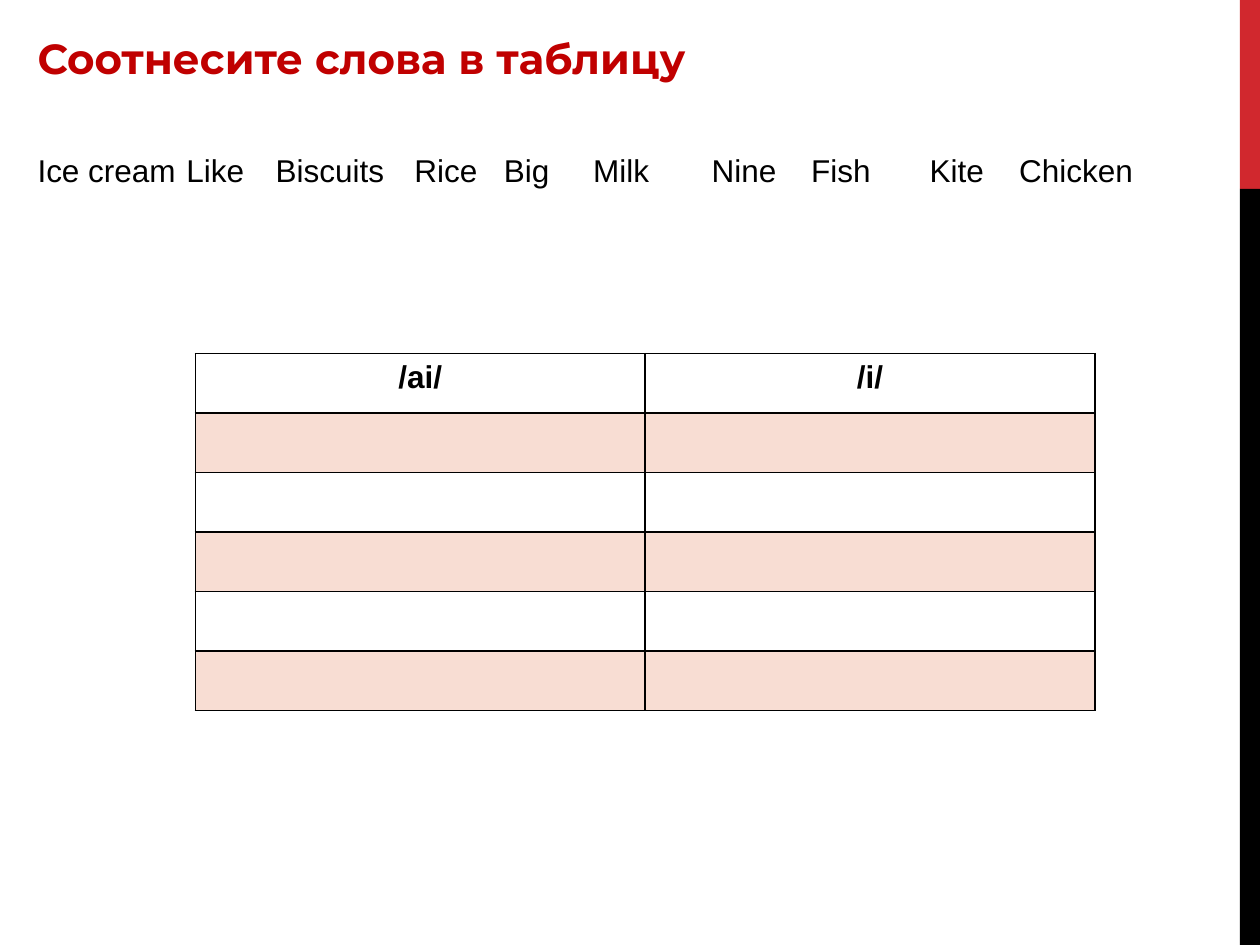
from lxml import etree
from pptx import Presentation
from pptx import util as u
from pptx.dml.color import RGBColor
from pptx.enum import shapes, text
from pptx.oxml import ns

RED = RGBColor(0xD1, 0x28, 0x2E)
TITLE_RED = RGBColor(0xC0, 0x00, 0x00)
BLACK = RGBColor(0x00, 0x00, 0x00)
ORANGE = RGBColor(0xDC, 0x59, 0x24)

WORDS = [
    ("Ice cream", 14.4, 96.5),
    ("Like", 99.4, 67.7),
    ("Biscuits", 150.5, 96.5),
    ("Rice", 229.7, 51.1),
    ("Big", 280.8, 51.1),
    ("Milk", 331.9, 67.7),
    ("Nine", 399.6, 56.9),
    ("Fish", 456.5, 67.7),
    ("Kite", 524.2, 62.6),
    ("Chicken", 575.3, 90.7),
]
SOUNDS = ["/ai/", "/i/"]


def write_text(frame, content, font="Arial", size=18, color=BLACK, bold=False, align=None):
    paragraph = frame.paragraphs[0]
    paragraph.alignment = align
    run = paragraph.add_run()
    run.text = content
    run.font.name = font
    run.font.size = u.Pt(size)
    run.font.color.rgb = color
    run.font.bold = bold


class SlideBuilder:
    def __init__(self, slide, border_width=1, tint_percent=20):
        self.slide = slide
        self.border_width = border_width
        self.tint_percent = tint_percent

    def bar(self, left, top, width, height, color):
        shape = self.slide.shapes.add_shape(
            shapes.MSO_SHAPE.RECTANGLE, u.Pt(left), u.Pt(top), u.Pt(width), u.Pt(height))
        shape.shadow.inherit = False
        shape.fill.solid()
        shape.fill.fore_color.rgb = color
        shape.line.fill.background()

    def label(self, content, left, top, width, height, wrap=True, **text_format):
        shape = self.slide.shapes.add_textbox(u.Pt(left), u.Pt(top), u.Pt(width), u.Pt(height))
        frame = shape.text_frame
        frame.word_wrap = wrap
        frame.auto_size = text.MSO_AUTO_SIZE.SHAPE_TO_FIT_TEXT
        write_text(frame, content, **text_format)

    def sorting_table(self, headers, rows, left, top, column_width, row_height):
        table = self.slide.shapes.add_table(
            rows, len(headers), u.Pt(left), u.Pt(top),
            u.Pt(column_width * len(headers)), u.Pt(row_height * rows)).table
        table.first_row = table.horz_banding = False
        for column in table.columns:
            column.width = u.Pt(column_width)
        for index, row in enumerate(table.rows):
            row.height = u.Pt(row_height)
            for cell in row.cells:
                if index % 2:
                    self.tint(cell)
                else:
                    cell.fill.background()
                self.borders(cell)
        for cell, header in zip(table.rows[0].cells, headers):
            write_text(cell.text_frame, header, bold=True, align=text.PP_ALIGN.CENTER)

    def tint(self, cell):
        cell.fill.solid()
        cell.fill.fore_color.rgb = ORANGE
        color = cell.fill._xPr.find(".//" + ns.qn("a:srgbClr"))
        etree.SubElement(color, ns.qn("a:alpha"), val=str(self.tint_percent * 1000))

    def borders(self, cell):
        properties = cell._tc.get_or_add_tcPr()
        for position, side in enumerate(("lnL", "lnR", "lnT", "lnB")):
            line = etree.Element(ns.qn(f"a:{side}"), w=str(u.Pt(self.border_width)))
            fill = etree.SubElement(line, ns.qn("a:solidFill"))
            etree.SubElement(fill, ns.qn("a:srgbClr"), val=str(BLACK))
            properties.insert(position, line)


def main():
    presentation = Presentation()
    presentation.slide_width = u.Pt(720)
    presentation.slide_height = u.Pt(540)
    builder = SlideBuilder(presentation.slides.add_slide(presentation.slide_layouts[6]))

    builder.bar(708.5, 0, 11.5, 108, RED)
    builder.bar(708.5, 108, 11.5, 432, BLACK)
    builder.label("Соотнесите слова в таблицу", 14.4, 15.1, 404, 36, wrap=False,
                  font="Montserrat", size=24, color=TITLE_RED, bold=True)
    for word, left, width in WORDS:
        builder.label(word, left, 82.8, width, 29)
    builder.sorting_table(SOUNDS, rows=6, left=111.6, top=202, column_width=257, row_height=34)

    presentation.save("out.pptx")


if __name__ == "__main__":
    main()
